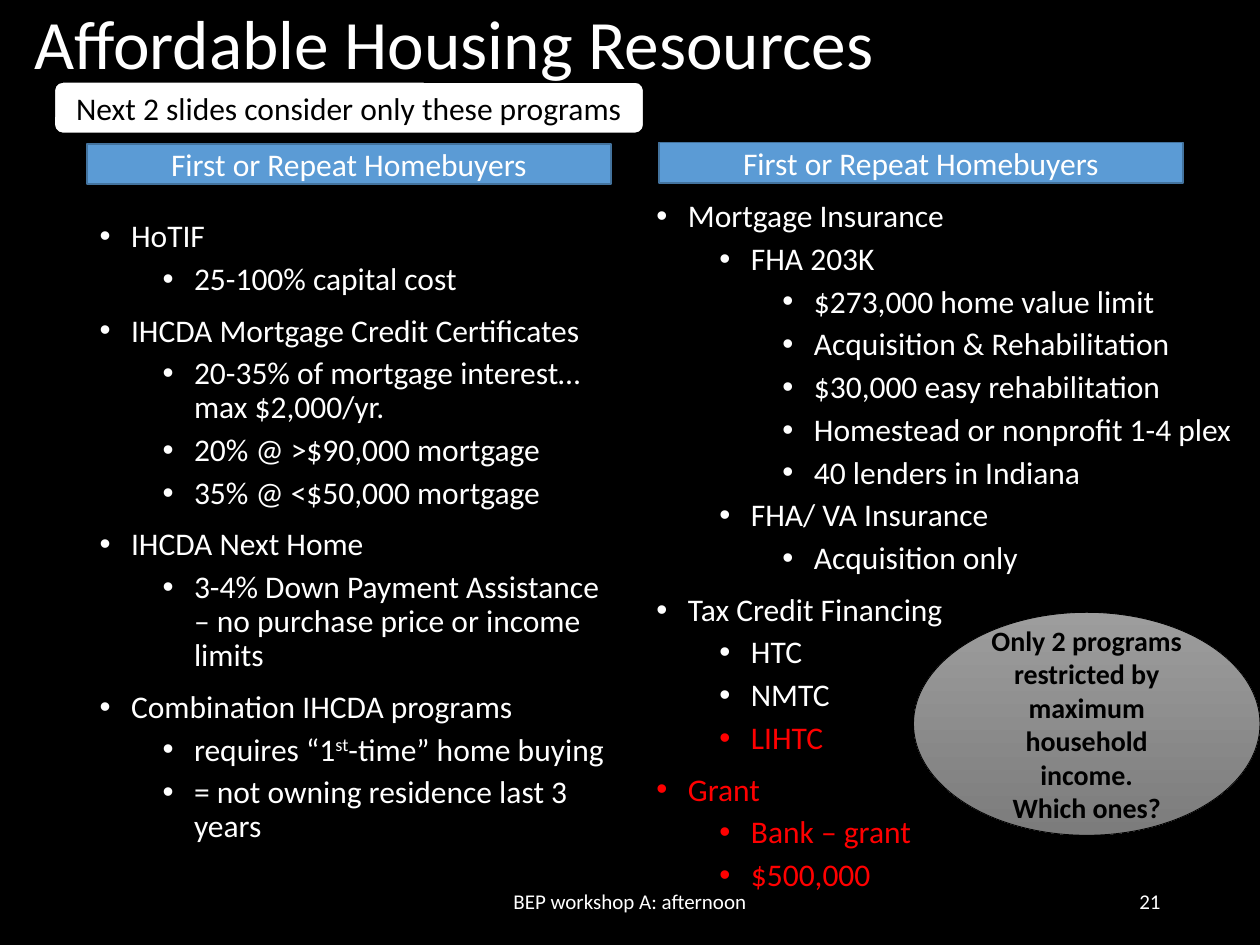
import pptx
import pptx.util
import pptx.dml.color
import pptx.enum.shapes
import pptx.enum.text
import pptx.oxml.ns
import lxml.etree

Inches = pptx.util.Inches
Pt = pptx.util.Pt
RGBColor = pptx.dml.color.RGBColor
Align = pptx.enum.text.PP_ALIGN
Anchor = pptx.enum.text.MSO_ANCHOR
Shape = pptx.enum.shapes.MSO_SHAPE

BLACK = RGBColor(0x00, 0x00, 0x00)
WHITE = RGBColor(0xFF, 0xFF, 0xFF)
RED = RGBColor(0xFF, 0x00, 0x00)
BLUE = RGBColor(0x5B, 0x9B, 0xD5)
DARK_BLUE = RGBColor(0x43, 0x73, 0x9E)
LIGHT_GRAY = RGBColor(0x9D, 0x9D, 0x9D)
DARK_GRAY = RGBColor(0x7C, 0x7C, 0x7C)

BUYER_PROGRAMS = [
    (0, "HoTIF", WHITE),
    (1, "25-100% capital cost", WHITE),
    (0, "IHCDA Mortgage Credit Certificates", WHITE),
    (1, "20-35% of mortgage interest…max $2,000/yr.", WHITE),
    (1, "20% @ >$90,000 mortgage", WHITE),
    (1, "35% @ <$50,000 mortgage", WHITE),
    (0, "IHCDA Next Home", WHITE),
    (1, "3-4% Down Payment Assistance – no purchase price or income limits", WHITE),
    (0, "Combination IHCDA programs", WHITE),
    (1, "requires “1^st^-time” home buying", WHITE),
    (1, "= not owning residence last 3 years", WHITE),
]
FINANCE_PROGRAMS = [
    (0, "Mortgage Insurance", WHITE),
    (1, "FHA 203K", WHITE),
    (2, "$273,000 home value limit", WHITE),
    (2, "Acquisition & Rehabilitation", WHITE),
    (2, "$30,000 easy rehabilitation", WHITE),
    (2, "Homestead or nonprofit 1-4 plex", WHITE),
    (2, "40 lenders in Indiana", WHITE),
    (1, "FHA/ VA Insurance", WHITE),
    (2, "Acquisition only", WHITE),
    (0, "Tax Credit Financing", WHITE),
    (1, "HTC", WHITE),
    (1, "NMTC", WHITE),
    (1, "LIHTC", RED),
    (0, "Grant", RED),
    (1, "Bank – grant", RED),
    (1, "$500,000", RED),
]


def place(box, left, top, width, height):
    box.left, box.top = Inches(left), Inches(top)
    box.width, box.height = Inches(width), Inches(height)


def style_font(para, size, color, bold=False):
    para.font.name = "Calibri"
    para.font.size = Pt(size)
    para.font.color.rgb = color
    para.font.bold = bold


def write_lines(box, lines, size, color, align, bold=False):
    frame = box.text_frame
    frame.word_wrap = True
    frame.auto_size = pptx.enum.text.MSO_AUTO_SIZE.NONE
    frame.vertical_anchor = Anchor.MIDDLE
    frame.text = "\n".join(lines)
    for para in frame.paragraphs:
        para.alignment = align
        style_font(para, size, color, bold)


def add_bullet(para, level):
    properties = para._p.get_or_add_pPr()
    properties.set("marL", str(Inches(0.25 + 0.5 * level)))
    properties.set("indent", str(Inches(-0.25)))
    font = lxml.etree.SubElement(properties, pptx.oxml.ns.qn("a:buFont"))
    font.set("typeface", "Arial")
    mark = lxml.etree.SubElement(properties, pptx.oxml.ns.qn("a:buChar"))
    mark.set("char", "•")


def fill_list(box, items):
    frame = box.text_frame
    frame.word_wrap = True
    frame.auto_size = pptx.enum.text.MSO_AUTO_SIZE.NONE
    frame.vertical_anchor = Anchor.TOP
    for number, (level, text, color) in enumerate(items):
        para = frame.add_paragraph() if number else frame.paragraphs[0]
        para.level = level
        add_bullet(para, level)
        para.line_spacing = 0.9
        para.space_before = Pt(0 if number == 0 else 5 if level else 10)
        style_font(para, 18, color)
        for position, part in enumerate(text.split("^")):
            span = para.add_run()
            span.text = part
            if position % 2:
                span._r.get_or_add_rPr().set("baseline", "30000")


def add_label(page, area, text, align):
    box = page.shapes.add_textbox(*map(Inches, area))
    write_lines(box, [text], 12, WHITE, align)


def add_panel(page, kind, area, line_color, line_width):
    box = page.shapes.add_shape(kind, *map(Inches, area))
    box.shadow.inherit = False
    box.line.color.rgb = line_color
    box.line.width = Pt(line_width)
    return box


def add_banner(page, kind, area, text, fill, line_color, text_color):
    box = add_panel(page, kind, area, line_color, 1)
    box.fill.solid()
    box.fill.fore_color.rgb = fill
    frame = box.text_frame
    frame.margin_left = frame.margin_right = Inches(0.07)
    frame.margin_top = frame.margin_bottom = Inches(0.04)
    write_lines(box, [text], 18, text_color, Align.CENTER)


def add_question(page, area, lines):
    box = add_panel(page, Shape.OVAL, area, BLACK, 0.5)
    box.fill.gradient()
    box.fill.gradient_angle = 270
    for stop, color, position in zip(
        box.fill.gradient_stops, (LIGHT_GRAY, DARK_GRAY), (0, 1)
    ):
        stop.color.rgb = color
        stop.position = position
    write_lines(box, lines, 16, BLACK, Align.CENTER, bold=True)


def main():
    deck = pptx.Presentation()
    deck.slide_width, deck.slide_height = Inches(10), Inches(7.5)
    page = deck.slides.add_slide(deck.slide_layouts[3])
    page.background.fill.solid()
    page.background.fill.fore_color.rgb = BLACK

    title, left_list, right_list = page.placeholders
    place(title, 0.17, 0.09, 8.62, 0.56)
    write_lines(title, ["Affordable Housing Resources"], 39.6, WHITE, Align.LEFT)
    title.text_frame.paragraphs[0].line_spacing = 0.9
    place(left_list, 0.69, 1.7, 4.25, 3.79)
    fill_list(left_list, BUYER_PROGRAMS)
    place(right_list, 5.11, 1.54, 4.8, 3.72)
    fill_list(right_list, FINANCE_PROGRAMS)

    add_label(page, (3.31, 6.95, 3.38, 0.4), "BEP workshop A: afternoon", Align.CENTER)
    add_label(page, (7.06, 6.95, 2.25, 0.4), "21", Align.RIGHT)
    for left, top in ((0.69, 1.14), (5.23, 1.13)):
        add_banner(page, Shape.RECTANGLE, (left, top, 4.16, 0.32),
                   "First or Repeat Homebuyers", BLUE, DARK_BLUE, WHITE)
    add_banner(page, Shape.ROUNDED_RECTANGLE, (0.43, 0.65, 4.68, 0.41),
               "Next 2 slides consider only these programs", WHITE, BLACK, BLACK)
    add_question(page, (7.25, 4.86, 2.75, 1.77),
                 ["Only 2 programs restricted by maximum household income.",
                  "Which ones?"])
    deck.save("out.pptx")


if __name__ == "__main__":
    main()
